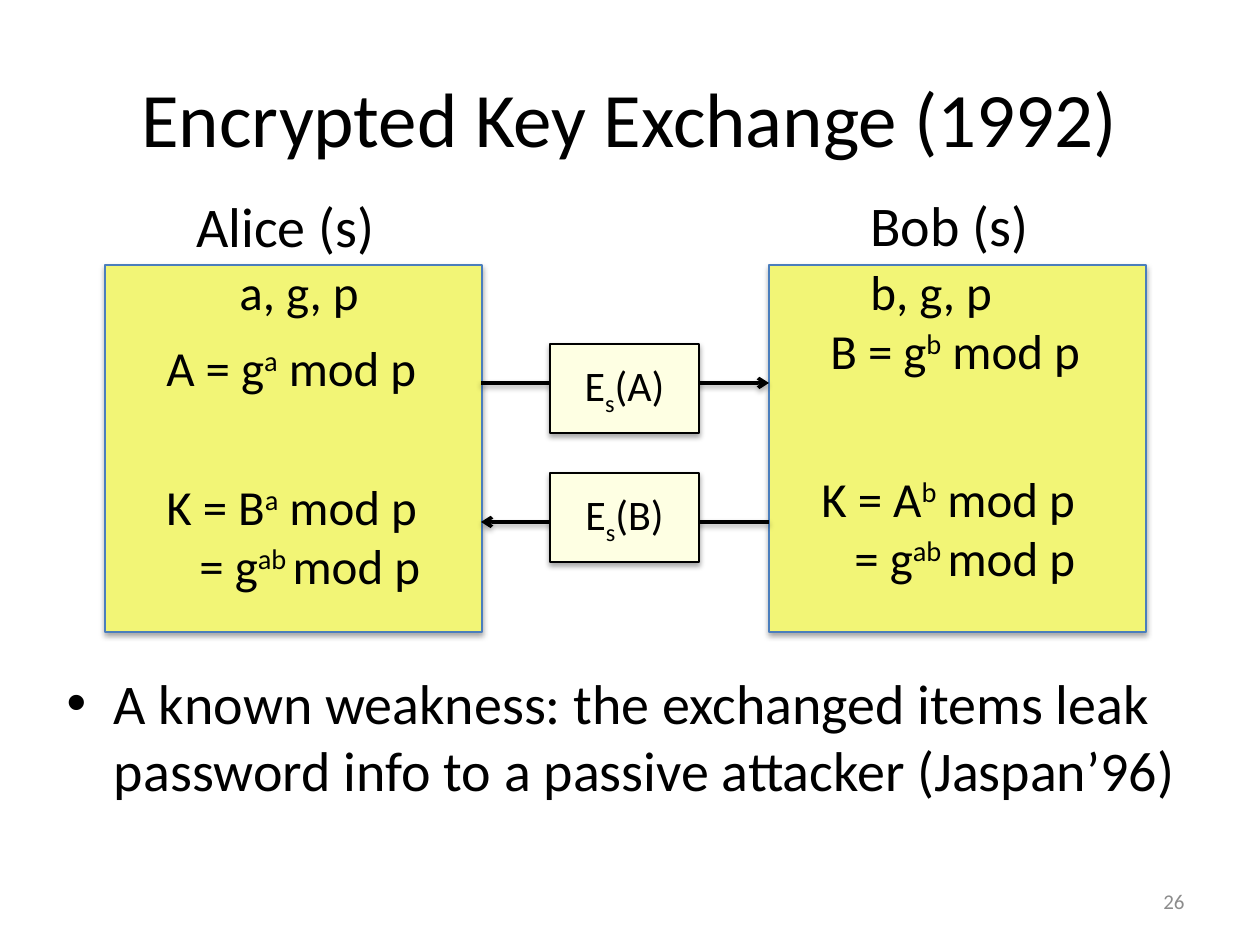
"""Build the Encrypted Key Exchange slide."""
from lxml.etree import SubElement
from pptx import Presentation
from pptx.dml.color import RGBColor
from pptx.enum.shapes import MSO_CONNECTOR, MSO_SHAPE
from pptx.enum.text import MSO_ANCHOR, PP_ALIGN
from pptx.oxml.ns import qn
from pptx.util import Emu, Pt

PIXEL = 914400 / 126
BLACK = RGBColor(0x00, 0x00, 0x00)
YELLOW = RGBColor(0xF2, 0xF5, 0x76)
CREAM = RGBColor(0xFE, 0xFF, 0xE3)
BLUE = RGBColor(0x4B, 0x7E, 0xBC)
GRAY = RGBColor(0x8C, 0x8C, 0x8C)


def px(*lengths):
    return [Emu(round(length * PIXEL)) for length in lengths]


def write_line(paragraph, text, size, baseline=30000, color=BLACK):
    """Write text whose parts between bars are raised or lowered."""
    paragraph.font.size = Pt(size)
    paragraph.font.name = "Calibri"
    paragraph.font.color.rgb = color
    for index, part in enumerate(text.split("|")):
        run = paragraph.add_run()
        run.text = part
        if index % 2:
            run.font._element.set("baseline", str(baseline))


presentation = Presentation()
presentation.slide_width, presentation.slide_height = px(1260, 945)
slide = presentation.slides.add_slide(presentation.slide_layouts[1])
shapes = slide.shapes

title, body = slide.placeholders
for placeholder, bounds, text, size in [
    (title, (63, 38, 1134, 158), "Encrypted Key Exchange (1992)", 44),
    (body, (54, 662, 1150, 213),
     "A known weakness: the exchanged items leak password info to a passive attacker (Jaspan’96)", 32),
]:
    placeholder.left, placeholder.top, placeholder.width, placeholder.height = px(*bounds)
    write_line(placeholder.text_frame.paragraphs[0], text, size)

shadowed = []
for left in (105, 769):
    party = shapes.add_shape(MSO_SHAPE.RECTANGLE, *px(left, 265, 377, 367))
    party.fill.solid()
    party.fill.fore_color.rgb = YELLOW
    party.line.color.rgb = BLUE
    party.line.width = Pt(0.75)
    shadowed.append(party)

for start, end, y, has_arrow in [
    (689, 769, 383, True),
    (559, 481, 522, True),
    (481, 551, 383, False),
    (689, 769, 522, False),
]:
    connector = shapes.add_connector(MSO_CONNECTOR.STRAIGHT, *px(start, y, end, y))
    connector.line.color.rgb = BLACK
    connector.line.width = Pt(2)
    if has_arrow:
        SubElement(connector.line._get_or_add_ln(), qn("a:tailEnd"), type="arrow")
    shadowed.append(connector)

for top, text in [(344, "E|s|(A)"), (473, "E|s|(B)")]:
    message = shapes.add_shape(MSO_SHAPE.RECTANGLE, *px(550, top, 149, 89))
    message.fill.solid()
    message.fill.fore_color.rgb = CREAM
    message.line.color.rgb = BLACK
    message.line.width = Pt(0.75)
    message.text_frame.vertical_anchor = MSO_ANCHOR.MIDDLE
    paragraph = message.text_frame.paragraphs[0]
    paragraph.alignment = PP_ALIGN.CENTER
    write_line(paragraph, text, 24, baseline=-25000)
    shadowed.append(message)

for shape in shadowed:
    effects = SubElement(shape._element.spPr, qn("a:effectLst"))
    shadow = SubElement(effects, qn("a:outerShdw"), blurRad="40000", dist="23000",
                        dir="5400000", rotWithShape="0")
    shadow_color = SubElement(shadow, qn("a:srgbClr"), val="000000")
    SubElement(shadow_color, qn("a:alpha"), val="35000")

for bounds, size, lines in [
    ((227, 255, 145, 72), 28, ["a, g, p"]),
    ((858, 255, 147, 72), 28, ["b, g, p"]),
    ((154, 331, 289, 72), 28, ["A = g|a| mod p"]),
    ((818, 314, 280, 72), 28, ["B = g|b| mod p"]),
    ((154, 470, 291, 131), 28, ["K = B|a| mod p", "= g|ab |mod p"]),
    ((809, 462, 291, 131), 28, ["K = A|b| mod p", "= g|ab |mod p"]),
    ((184, 185, 277, 81), 32, ["Alice (s)"]),
    ((858, 184, 185, 81), 32, ["Bob (s)"]),
]:
    frame = shapes.add_textbox(*px(*bounds)).text_frame
    write_line(frame.paragraphs[0], lines[0], size)
    for line in lines[1:]:
        paragraph = frame.add_paragraph()
        write_line(paragraph, line, size)
        paragraph._p.get_or_add_pPr().set("marL", str(px(33)[0]))

number_frame = shapes.add_textbox(*px(903, 876, 294, 50)).text_frame
number_frame.vertical_anchor = MSO_ANCHOR.MIDDLE
number_frame.word_wrap = True
number_paragraph = number_frame.paragraphs[0]
number_paragraph.alignment = PP_ALIGN.RIGHT
write_line(number_paragraph, "26", 12, color=GRAY)

presentation.save("out.pptx")
